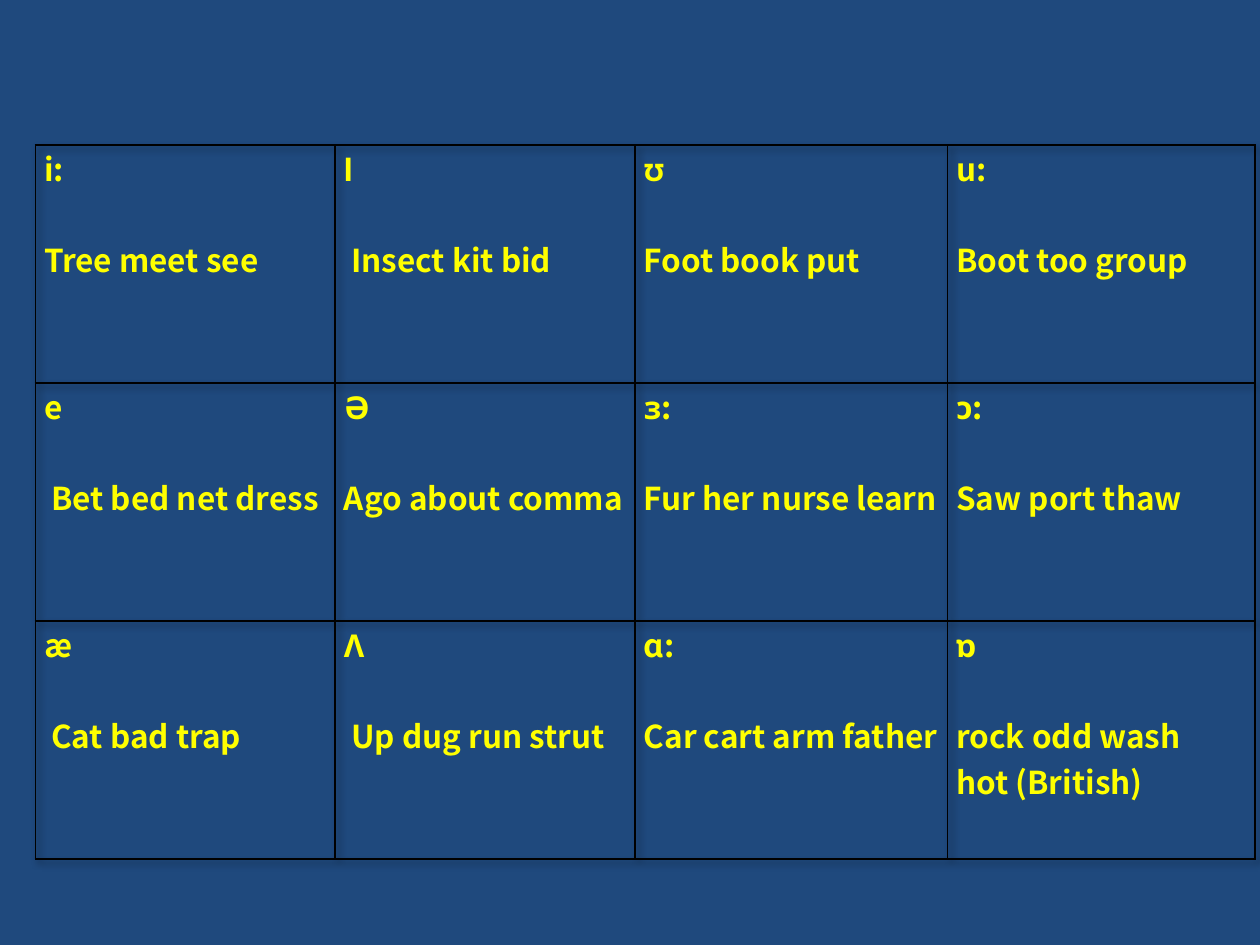
from lxml import etree
from pptx import Presentation
from pptx import util as u
from pptx.dml.color import RGBColor
from pptx.enum import text
from pptx.oxml import parse_xml
from pptx.oxml.ns import nsdecls, qn

FONT = "Noto Sans CJK KR"
BACKGROUND, YELLOW, BLACK = "1F497D", "FFFF00", "000000"
COLUMN_WIDTHS = [2.38, 2.38, 2.48, 2.44]
ROW_HEIGHT = 1.89
LINE_GAP = 26  # one line of 18 pt text

# Each cell: vowel symbol, then its example words
VOWELS = [
    [("i:", "Tree meet see"), ("I", " Insect kit bid"),
     ("ʊ", "Foot book put"), ("u:", "Boot too group")],
    [("e", " Bet bed net dress"), ("Ә", "Ago about comma"),
     ("ɜ:", "Fur her nurse learn"), ("ɔ:", "Saw port thaw")],
    [("æ", " Cat bad trap"), ("Ʌ", " Up dug run strut"),
     ("ɑ:", "Car cart arm father"), ("ɒ", "rock odd wash", "hot (British)")],
]


def color(hex_value):
    return RGBColor.from_string(hex_value)


def set_all(target, values):
    for name, value in values.items():
        setattr(target, name, value)


def add_borders(cell):
    properties = cell._tc.get_or_add_tcPr()
    for position, side in enumerate(("lnL", "lnR", "lnT", "lnB")):
        line = parse_xml(
            f'<a:{side} {nsdecls("a")} w="{u.Pt(1)}"><a:solidFill>'
            f'<a:srgbClr val="{BLACK}"/></a:solidFill></a:{side}>')
        properties.insert(position, line)


def add_table_shadow(table):
    shadow = parse_xml(
        f'<a:effectLst {nsdecls("a")}><a:outerShdw blurRad="{u.Pt(4)}" '
        f'dist="{u.Pt(3)}" dir="2700000" algn="tl" rotWithShape="0">'
        f'<a:srgbClr val="{BLACK}"><a:alpha val="40000"/></a:srgbClr>'
        '</a:outerShdw></a:effectLst>')
    table._tbl.tblPr.insert(0, shadow)


def fill_cell(cell, lines):
    set_all(cell, {
        "margin_left": u.Inches(0.07), "margin_right": u.Inches(0.07),
        "margin_top": 0, "margin_bottom": 0,
        "vertical_anchor": text.MSO_ANCHOR.TOP,
    })
    cell.fill.background()
    add_borders(cell)
    frame = cell.text_frame
    for index, line in enumerate(lines):
        paragraph = frame.add_paragraph() if index else frame.paragraphs[0]
        set_all(paragraph, {
            "alignment": text.PP_ALIGN.JUSTIFY,
            "space_before": u.Pt(LINE_GAP if index == 1 else 0),
        })
        run = paragraph.add_run()
        run.text = line
        set_all(run.font, {"name": FONT, "size": u.Pt(18), "bold": True})
        run.font.color.rgb = color(YELLOW)
        # Phonetic symbols may be treated as East Asian text
        east_asian = etree.SubElement(run.font._element, qn("a:ea"))
        east_asian.set("typeface", FONT)


def add_vowel_table(slide, left, top, width, height):
    table = slide.shapes.add_table(
        len(VOWELS), len(COLUMN_WIDTHS), left, top, width, height).table
    set_all(table, {"first_row": False, "horz_banding": False})
    add_table_shadow(table)
    for column, column_width in zip(table.columns, COLUMN_WIDTHS):
        column.width = u.Inches(column_width)
    for row, vowels in zip(table.rows, VOWELS):
        row.height = u.Inches(ROW_HEIGHT)
        for cell, lines in zip(row.cells, vowels):
            fill_cell(cell, lines)


def main():
    presentation = Presentation()
    set_all(presentation, {"slide_width": u.Inches(10),
                           "slide_height": u.Inches(7.5)})
    slide = presentation.slides.add_slide(presentation.slide_layouts[6])
    slide.background.fill.solid()
    slide.background.fill.fore_color.rgb = color(BACKGROUND)
    add_vowel_table(slide, u.Inches(0.28), u.Inches(1.15),
                    u.Inches(sum(COLUMN_WIDTHS)),
                    u.Inches(ROW_HEIGHT * len(VOWELS)))
    presentation.save("out.pptx")


if __name__ == "__main__":
    main()
